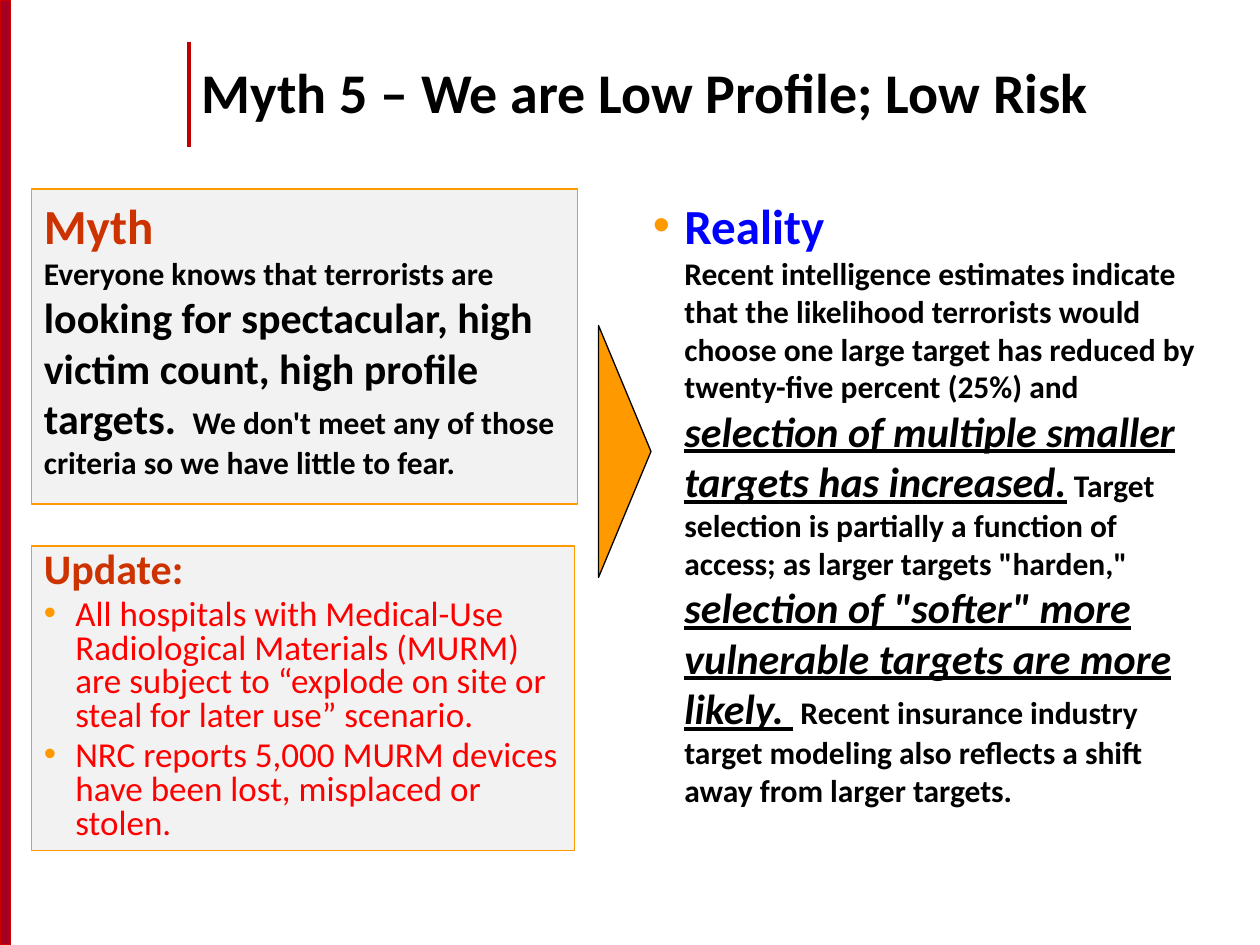
from dataclasses import dataclass
from typing import Any, NamedTuple, Optional

import pptx
import pptx.dml.color
import pptx.enum.shapes
import pptx.enum.text
import pptx.oxml
import pptx.oxml.ns
import pptx.util
from lxml import etree

COLORS = {
    "band": "A50021",
    "band_edge": "CC0000",
    "rule": "C00000",
    "panel": "F2F2F2",
    "accent": "FF9900",
    "myth": "CC3300",
    "reality": "0000FF",
    "update": "FF0000",
    "black": "000000",
}
FONT = "Calibri"
COLUMNS, ROWS = 120, 90
TITLE_ONLY = 5
SHAPES = pptx.enum.shapes.MSO_SHAPE

deck = pptx.Presentation()
deck.slide_width = pptx.util.Inches(10)
deck.slide_height = pptx.util.Inches(7.5)


class Area(NamedTuple):
    column: float
    row: float
    columns: float
    rows: float


@dataclass
class Span:
    text: str
    size: int = 18
    color: str = "black"
    bold: bool = True
    emphasis: bool = False
    break_after: bool = False


@dataclass
class Para:
    spans: list[Span]
    bullet: bool = False
    spacing: float = 1.0
    before: int = 0


def rgb(name: str) -> pptx.dml.color.RGBColor:
    return pptx.dml.color.RGBColor.from_string(COLORS[name])


def across(columns: float) -> int:
    return round(deck.slide_width * columns / COLUMNS)


def down(rows: float) -> int:
    return round(deck.slide_height * rows / ROWS)


def bounds(area: Area) -> tuple[int, int, int, int]:
    return across(area.column), down(area.row), across(area.columns), down(area.rows)


def apply(target: Any, values: dict[str, Any]) -> None:
    for name, value in values.items():
        setattr(target, name, value)


def add_bullet(paragraph: Any) -> None:
    properties = paragraph._p.get_or_add_pPr()
    indent = pptx.util.Inches(0.25)
    properties.set("marL", str(indent))
    properties.set("indent", str(-indent))
    qn = pptx.oxml.ns.qn
    color = etree.SubElement(properties, qn("a:buClr"))
    etree.SubElement(color, qn("a:srgbClr"), val=COLORS["accent"])
    etree.SubElement(properties, qn("a:buFont"), typeface="Arial")
    etree.SubElement(properties, qn("a:buChar"), char="•")


def write(box: Any, paras: list[Para], anchor: Any = pptx.enum.text.MSO_ANCHOR.TOP) -> None:
    frame = box.text_frame
    apply(frame, {"word_wrap": True, "vertical_anchor": anchor,
                  "auto_size": pptx.enum.text.MSO_AUTO_SIZE.NONE})
    for number, para in enumerate(paras):
        paragraph = frame.add_paragraph() if number else frame.paragraphs[0]
        apply(paragraph, {"alignment": pptx.enum.text.PP_ALIGN.LEFT,
                          "line_spacing": para.spacing,
                          "space_before": pptx.util.Pt(para.before)})
        if para.bullet:
            add_bullet(paragraph)
        for span in para.spans:
            run = paragraph.add_run()
            run.text = span.text
            apply(run.font, {"name": FONT, "size": pptx.util.Pt(span.size),
                             "bold": span.bold, "italic": span.emphasis,
                             "underline": span.emphasis})
            run.font.color.rgb = rgb(span.color)
            if span.break_after:
                paragraph.add_line_break()


def add_block(page: Any, kind: Any, area: Area, fill: str, edge: str,
              width: float = 0.75, rotation: float = 0,
              paras: Optional[list[Para]] = None) -> None:
    shape = page.shapes.add_shape(kind, *bounds(area))
    shape.shadow.inherit = False
    shape.rotation = rotation
    shape.fill.solid()
    shape.fill.fore_color.rgb = rgb(fill)
    shape.line.color.rgb = rgb(edge)
    shape.line.width = pptx.util.Pt(width)
    if paras:
        write(shape, paras)


def add_rule(page: Any, column: float, top: float, bottom: float) -> None:
    line = page.shapes.add_connector(
        pptx.enum.shapes.MSO_CONNECTOR.STRAIGHT,
        across(column), down(top), across(column), down(bottom))
    line.line.color.rgb = rgb("rule")
    line.line.width = pptx.util.Pt(2.25)
    etree.SubElement(line._element.spPr, pptx.oxml.ns.qn("a:effectLst"))


MYTH = [Para([
    Span("Myth", 28, "myth", break_after=True),
    Span("Everyone knows that terrorists are "),
    Span("looking for spectacular, high victim count, high profile targets.\u00a0", 24),
    Span(" We don't meet any of those criteria so we have little to fear."),
])]
REALITY = [Para([
    Span("Reality", 28, "reality", break_after=True),
    Span("Recent intelligence estimates indicate that the likelihood terrorists would "
         "choose one large target has reduced by twenty-five percent (25%) and "),
    Span("selection of multiple smaller targets has increased.", 24, emphasis=True),
    Span(" Target selection is partially a function of access; "
         "as larger targets \"harden,\" "),
    Span("selection of \"softer\" more vulnerable targets are more likely.\u00a0", 24,
         emphasis=True),
    Span(" Recent insurance industry target modeling also reflects a shift "
         "away from larger targets."),
], bullet=True)]
UPDATES = [
    "All hospitals with Medical-Use Radiological Materials (MURM) are subject to "
    "“explode on site or steal for later use” scenario.",
    "NRC reports 5,000 MURM devices have been lost, misplaced or stolen.",
]
UPDATE = [Para([Span("Update:", 24, "myth")], spacing=0.8)] + [
    Para([Span(text, 20, "update", bold=False)], bullet=True, spacing=0.8, before=4)
    for text in UPDATES
]


def main() -> None:
    page = deck.slides.add_slide(deck.slide_layouts[TITLE_ONLY])
    add_block(page, SHAPES.RECTANGLE, Area(0, 0, 1, ROWS), "band", "band_edge", 1)
    add_rule(page, 18, 4, 14)
    add_block(page, SHAPES.RECTANGLE, Area(3, 18, 52, 30), "panel", "accent", paras=MYTH)
    write(page.shapes.add_textbox(*bounds(Area(61, 18, 56, 63))), REALITY)
    add_block(page, SHAPES.ISOSCELES_TRIANGLE, Area(47.5, 40.5, 24, 5),
              "accent", "black", rotation=90)
    add_block(page, SHAPES.RECTANGLE, Area(3, 52, 51.7, 29), "panel", "accent", paras=UPDATE)

    title = page.shapes.title
    apply(title, dict(zip(("left", "top", "width", "height"),
                          bounds(Area(18, 3, 99, 12.4)))))
    write(title, [Para([Span("Myth 5 – We are Low Profile; Low Risk", 32)], spacing=0.85)],
          pptx.enum.text.MSO_ANCHOR.MIDDLE)
    deck.save("out.pptx")


if __name__ == "__main__":
    main()
